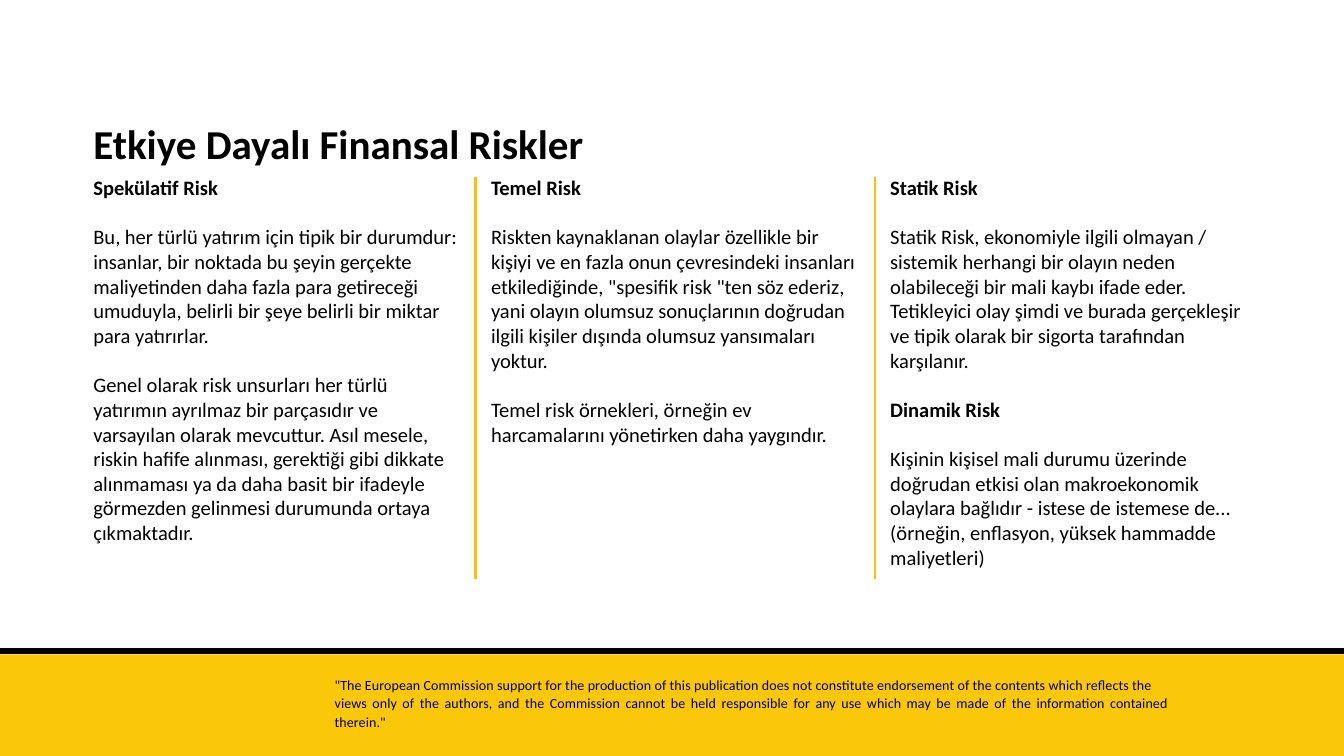
from typing import NamedTuple

from pptx import Presentation
from pptx.dml.color import RGBColor
from pptx.enum.shapes import MSO_CONNECTOR, MSO_SHAPE
from pptx.enum.text import PP_ALIGN
from pptx.oxml.ns import qn
from pptx.slide import Slide
from pptx.text.text import TextFrame
from pptx.util import Cm, Pt
from lxml.etree import SubElement

WIDE = 50.8
TALL = 28.58
BLACK = "000000"
YELLOW = "FAC709"
AMBER = "FFC000"
GAP = 26.4


class Item(NamedTuple):
    text: str
    bold: bool = False


class Column(NamedTuple):
    left: float
    height: float
    items: list[Item]


class Rule(NamedTuple):
    start: tuple[float, float]
    end: tuple[float, float]
    color: str
    weight: float


COLUMNS = [
    Column(3.28, 14.35, [
        Item("Spekülatif Risk", True),
        Item("Bu, her türlü yatırım için tipik bir durumdur: insanlar, bir noktada bu şeyin "
             "gerçekte maliyetinden daha fazla para getireceği umuduyla, belirli bir şeye "
             "belirli bir miktar para yatırırlar."),
        Item("Genel olarak risk unsurları her türlü yatırımın ayrılmaz bir parçasıdır ve "
             "varsayılan olarak mevcuttur. Asıl mesele, riskin hafife alınması, gerektiği "
             "gibi dikkate alınmaması ya da daha basit bir ifadeyle görmezden gelinmesi "
             "durumunda ortaya çıkmaktadır."),
    ]),
    Column(18.31, 10.59, [
        Item("Temel Risk", True),
        Item("Riskten kaynaklanan olaylar özellikle bir kişiyi ve en fazla onun çevresindeki "
             "insanları etkilediğinde, \"spesifik risk \"ten söz ederiz, yani olayın olumsuz "
             "sonuçlarının doğrudan ilgili kişiler dışında olumsuz yansımaları yoktur."),
        Item("Temel risk örnekleri, örneğin ev harcamalarını yönetirken daha yaygındır."),
    ]),
    Column(33.4, 15.29, [
        Item("Statik Risk", True),
        Item("Statik Risk, ekonomiyle ilgili olmayan / sistemik herhangi bir olayın neden "
             "olabileceği bir mali kaybı ifade eder. Tetikleyici olay şimdi ve burada "
             "gerçekleşir ve tipik olarak bir sigorta tarafından karşılanır."),
        Item("Dinamik Risk", True),
        Item("Kişinin kişisel mali durumu üzerinde doğrudan etkisi olan makroekonomik "
             "olaylara bağlıdır - istese de istemese de... (örneğin, enflasyon, yüksek "
             "hammadde maliyetleri)"),
    ]),
]

RULES = [
    Rule((0, 24.61), (WIDE, 24.61), BLACK, 6.75),
    Rule((17.96, 6.71), (17.96, 21.87), AMBER, 3),
    Rule((33.07, 6.71), (33.07, 21.87), AMBER, 3),
]

NOTICE = [
    Item("\"The European Commission support for the production of this publication does not "
         "constitute endorsement of the contents which reflects the"),
    Item("views only of the authors, and the Commission cannot be held responsible for any "
         "use which may be made of the information contained therein.\""),
]


def paint(code: str) -> RGBColor:
    return RGBColor.from_string(code)


def add_band(slide: Slide) -> None:
    band = slide.shapes.add_shape(
        MSO_SHAPE.RECTANGLE, Cm(0), Cm(24.74), Cm(WIDE), Cm(TALL - 24.74))
    band.shadow.inherit = False
    band.fill.solid()
    band.fill.fore_color.rgb = paint(YELLOW)
    band.line.fill.background()


def add_rule(slide: Slide, rule: Rule) -> None:
    line = slide.shapes.add_connector(
        MSO_CONNECTOR.STRAIGHT, *map(Cm, rule.start + rule.end))
    line.line.color.rgb = paint(rule.color)
    line.line.width = Pt(rule.weight)
    SubElement(line._element.spPr, qn("a:effectLst"))


def add_box(slide: Slide, left: float, top: float, width: float, height: float) -> TextFrame:
    box = slide.shapes.add_textbox(Cm(left), Cm(top), Cm(width), Cm(height))
    box.text_frame.word_wrap = True
    return box.text_frame


def add_text(frame: TextFrame, items: list[Item], size: float,
             gap: float = 0, track: int = 0) -> None:
    for index, item in enumerate(items):
        para = frame.add_paragraph() if index else frame.paragraphs[0]
        if index and gap:
            para.space_before = Pt(gap)
        run = para.add_run()
        run.text = item.text
        run.font.name = "Calibri"
        run.font.size = Pt(size)
        run.font.bold = item.bold
        run.font.color.rgb = paint(BLACK)
        if track:
            run._r.get_or_add_rPr().set("spc", str(track))


def add_notice(slide: Slide) -> None:
    frame = add_box(slide, 12.37, 25.5, 32.08, 2.24)
    add_text(frame, NOTICE, 15, track=10)
    for para, space in zip(frame.paragraphs, (Pt(16.1), 1.13)):
        para.alignment = PP_ALIGN.JUSTIFY
        para.line_spacing = space
        para._p.get_or_add_pPr().set("marL", str(Cm(0.03)))


def main() -> None:
    deck = Presentation()
    deck.slide_width = Cm(WIDE)
    deck.slide_height = Cm(TALL)
    slide = deck.slides.add_slide(deck.slide_layouts[6])
    add_band(slide)
    add_notice(slide)
    title = add_box(slide, 3.28, 4.37, 26.04, 2.13)
    add_text(title, [Item("Etkiye Dayalı Finansal Riskler", True)], 44)
    for column in COLUMNS:
        frame = add_box(slide, column.left, 6.5, 14.4, column.height)
        add_text(frame, column.items, 22, GAP)
    for rule in RULES:
        add_rule(slide, rule)
    deck.save("out.pptx")


if __name__ == "__main__":
    main()
